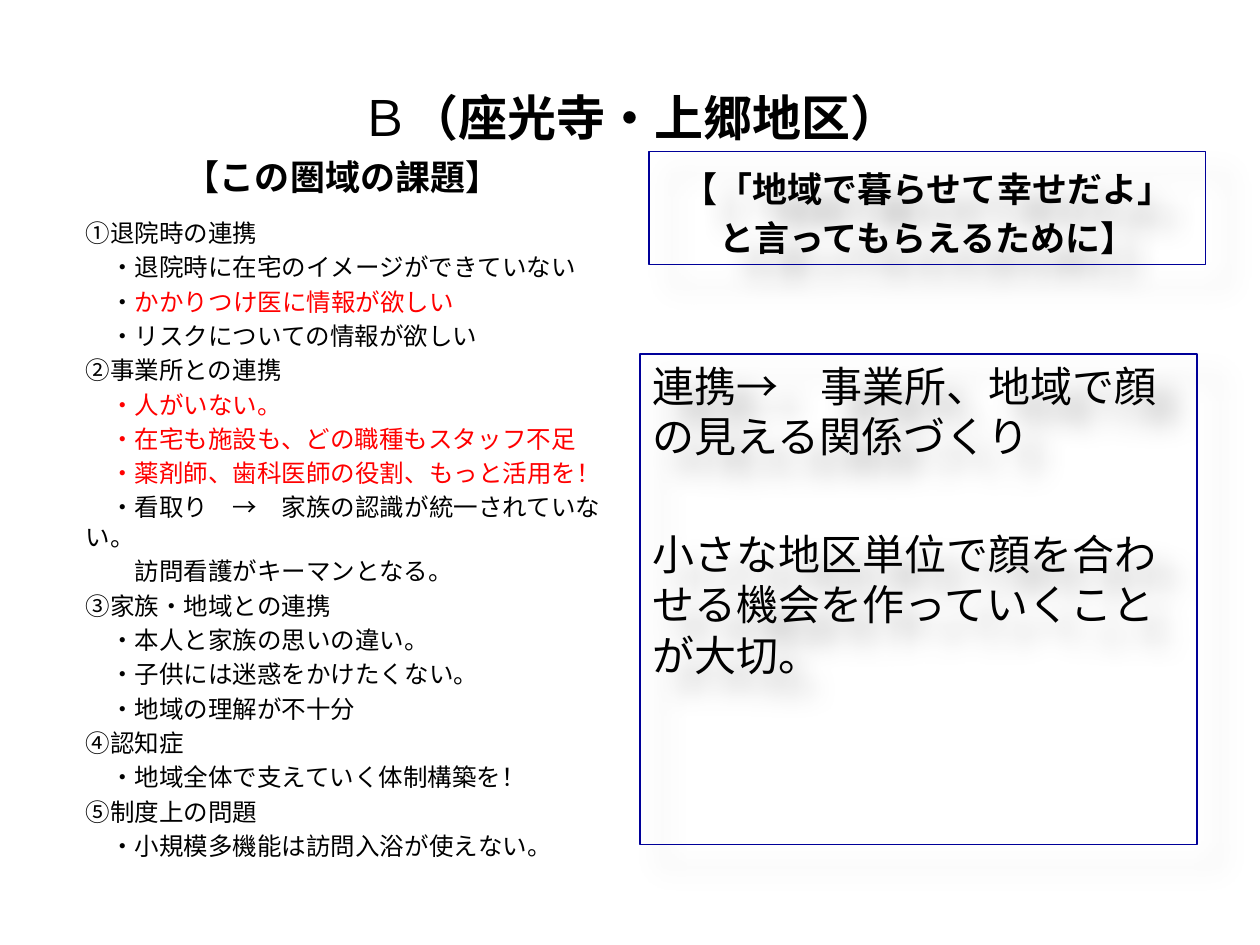
"""Build the slide on local care issues and goals for district B."""
from dataclasses import dataclass

from lxml import etree
from pptx import Presentation
from pptx.dml.color import RGBColor
from pptx.enum.shapes import MSO_SHAPE
from pptx.enum.text import MSO_ANCHOR, PP_ALIGN
from pptx.oxml import parse_xml
from pptx.oxml.ns import nsdecls
from pptx.util import Inches, Pt

RECTANGLE = MSO_SHAPE.RECTANGLE
TOP, MIDDLE, BOTTOM = MSO_ANCHOR.TOP, MSO_ANCHOR.MIDDLE, MSO_ANCHOR.BOTTOM
LEFT, CENTER = PP_ALIGN.LEFT, PP_ALIGN.CENTER

BLACK = RGBColor(0x00, 0x00, 0x00)
RED = RGBColor(0xFF, 0x00, 0x00)
NAVY = RGBColor(0x00, 0x00, 0x99)

FONT = "Calibri"
TITLE_ONLY = 5
TITLE_SIZE = 28
SPACING_RATIO = 0.2


@dataclass
class Span:
    text: str
    color: RGBColor = BLACK
    bold: bool = False


@dataclass
class Panel:
    left: float
    top: float
    height: float
    size: int
    lines: list[list[Span]]
    align: PP_ALIGN = LEFT
    anchor: MSO_ANCHOR = TOP
    framed: bool = False
    space_before: float | None = None
    width: float = 4.42


TITLE = [Span("Ｂ"), Span("（座光寺・上郷地区）", bold=True)]

ISSUES = [
    [Span("①退院時の連携")],
    [Span("　・退院時に在宅のイメージができていない")],
    [Span("　・"), Span("かかりつけ医に情報が欲しい", RED)],
    [Span("　・リスクについての情報が欲しい")],
    [Span("②事業所との連携")],
    [Span("　・人がいない。", RED)],
    [Span("　・在宅も施設も、どの職種もスタッフ不足", RED)],
    [Span("　・薬剤師、歯科医師の役割、もっと活用を！", RED)],
    [Span("　・看取り　→　家族の認識が統一されていない。")],
    [Span("　　訪問看護がキーマンとなる。")],
    [Span("③家族・地域との連携")],
    [Span("　・本人と家族の思いの違い。")],
    [Span("　・子供には迷惑をかけたくない。")],
    [Span("　・地域の理解が不十分")],
    [Span("④認知症")],
    [Span("　・地域全体で支えていく体制構築を！")],
    [Span("⑤制度上の問題")],
    [Span("　・小規模多機能は訪問入浴が使えない。")],
]

PANELS = [
    Panel(0.51, 1.2, 0.42, 20, [[Span("【この圏域の課題】", bold=True)]], CENTER, BOTTOM),
    Panel(0.58, 1.68, 5.02, 14, ISSUES),
    Panel(5.15, 1.2, 0.9, 20, [
        [Span("【「地域で暮らせて幸せだよ」", bold=True)],
        [Span("と言ってもらえるために】", bold=True)],
    ], CENTER, BOTTOM, framed=True),
    Panel(5.08, 2.81, 3.89, 24, [
        [Span("連携→　事業所、地域で顔の見える関係づくり")],
        [Span("小さな地区単位で顔を合わせる機会を作っていくことが大切。")],
    ], framed=True, space_before=38.4),
]


def write_line(paragraph, spans: list[Span], size: int, align: PP_ALIGN) -> None:
    """Write the spans of one paragraph and format them."""
    paragraph.alignment = align
    for span in spans:
        run = paragraph.add_run()
        run.text = span.text
        run.font.name = FONT
        run.font.size = Pt(size)
        run.font.bold = span.bold
        run.font.color.rgb = span.color


def add_soft_shadow(shape) -> None:
    """Give the shape a blurred shadow to the lower right."""
    properties = shape.fill._xPr
    for effects in properties.findall(etree.QName(
            "http://schemas.openxmlformats.org/drawingml/2006/main", "effectLst")):
        properties.remove(effects)
    properties.append(parse_xml(
        f'<a:effectLst {nsdecls("a")}>'
        f'<a:outerShdw blurRad="{Pt(15)}" dist="{Pt(18)}" dir="{45 * 60000}" '
        'algn="tl" rotWithShape="0"><a:srgbClr val="000000">'
        '<a:alpha val="30000"/></a:srgbClr></a:outerShdw></a:effectLst>'))


def add_panel(slide, panel: Panel) -> None:
    """Draw one text panel, with a frame and a shadow where asked."""
    place = [Inches(v) for v in (panel.left, panel.top, panel.width, panel.height)]
    if panel.framed:
        shape = slide.shapes.add_shape(RECTANGLE, *place)
        shape.fill.background()
        shape.line.color.rgb = NAVY
        shape.line.width = Pt(0.75)
        add_soft_shadow(shape)
    else:
        shape = slide.shapes.add_textbox(*place)
    text_frame = shape.text_frame
    text_frame.word_wrap = True
    text_frame.vertical_anchor = panel.anchor
    spacing = panel.space_before or panel.size * SPACING_RATIO
    for index, spans in enumerate(panel.lines):
        paragraph = text_frame.add_paragraph() if index else text_frame.paragraphs[0]
        paragraph.space_before = Pt(spacing if index else 0)
        write_line(paragraph, spans, panel.size, panel.align)


def add_title(slide) -> None:
    """Place the slide title and write its spans."""
    title = slide.shapes.title
    title.left, title.top = Inches(0.5), Inches(0.3)
    title.width, title.height = Inches(9), Inches(1.25)
    title.text_frame.vertical_anchor = MIDDLE
    write_line(title.text_frame.paragraphs[0], TITLE, TITLE_SIZE, CENTER)


def main() -> None:
    """Build and save the presentation."""
    presentation = Presentation()
    presentation.slide_width, presentation.slide_height = Inches(10), Inches(7.5)
    slide = presentation.slides.add_slide(presentation.slide_layouts[TITLE_ONLY])
    add_title(slide)
    for panel in PANELS:
        add_panel(slide, panel)
    presentation.save("out.pptx")


if __name__ == "__main__":
    main()
